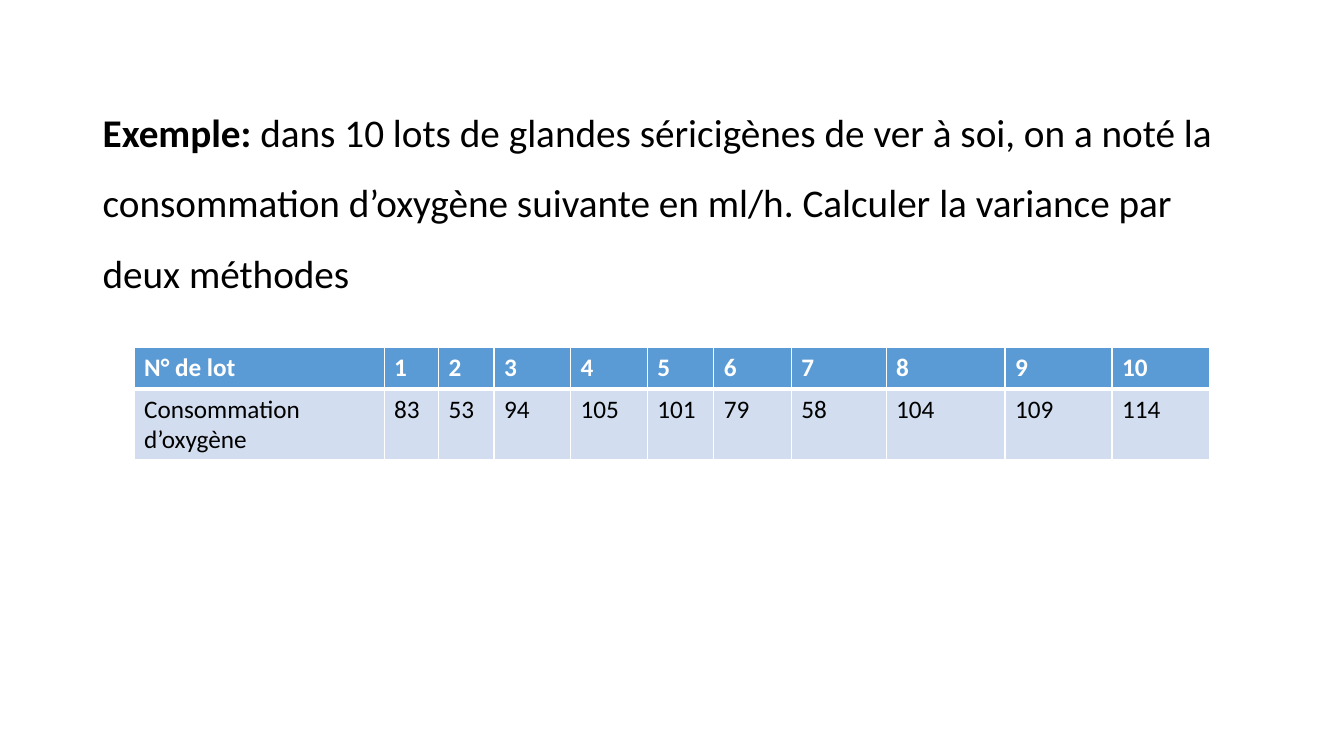
from dataclasses import dataclass

from lxml import etree
from pptx import Presentation
from pptx.dml.color import RGBColor
from pptx.enum.text import MSO_ANCHOR
from pptx.oxml.ns import qn
from pptx.util import Inches, Pt

TOP = MSO_ANCHOR.TOP


@dataclass(frozen=True)
class Theme:
    font: str = "Calibri"
    ink: str = "000000"
    white: str = "FFFFFF"
    head: str = "5B9BD5"
    band: str = "D2DEEF"
    body: int = 28
    cell: int = 18
    thin: int = 1
    thick: int = 3


THEME = Theme()

TASK = [
    ("Exemple:", True),
    (" dans 10 lots de glandes séricigènes de ver à soi, on a noté la "
     "consommation d’oxygène suivante en ml/h. Calculer la variance par "
     "deux méthodes", False),
]
OXYGEN = [83, 53, 94, 105, 101, 79, 58, 104, 109, 114]
ROWS = [
    ["N° de lot", *range(1, len(OXYGEN) + 1)],
    ["Consommation d’oxygène", *OXYGEN],
]
WIDTHS = [2.48, 0.54, 0.55, 0.76, 0.76, 0.66, 0.77, 0.94, 1.18, 1.06, 0.97]
HEIGHTS = [0.41, 0.7]


def set_all(item, values):
    for name, value in values.items():
        setattr(item, name, value)


def add_run(para, text, size, color, bold):
    run = para.add_run()
    run.text = str(text)
    set_all(run.font, {"name": THEME.font, "size": Pt(size), "bold": bold})
    run.font.color.rgb = RGBColor.from_string(color)


def add_task(slide, left, top, width, height):
    box = slide.shapes.add_textbox(
        Inches(left), Inches(top), Inches(width), Inches(height))
    frame = box.text_frame
    set_all(frame, {"word_wrap": True, "vertical_anchor": TOP})
    para = frame.paragraphs[0]
    set_all(para, {"line_spacing": 1.5, "space_before": Pt(10)})
    for text, bold in TASK:
        add_run(para, text, THEME.body, THEME.ink, bold)


def set_edges(cell, edges):
    props = cell._tc.get_or_add_tcPr()
    for side, width in edges.items():
        line = etree.SubElement(props, qn(f"a:ln{side}"), w=str(Pt(width)))
        fill = etree.SubElement(line, qn("a:solidFill"))
        etree.SubElement(fill, qn("a:srgbClr"), val=THEME.white)


def add_lots(slide, left, top):
    table = slide.shapes.add_table(
        len(ROWS), len(WIDTHS), Inches(left), Inches(top),
        Inches(sum(WIDTHS)), Inches(sum(HEIGHTS))).table
    for col, width in zip(table.columns, WIDTHS):
        col.width = Inches(width)
    for row, height in zip(table.rows, HEIGHTS):
        row.height = Inches(height)

    # Header row, then measured values; the edge between them is thick
    looks = [
        (THEME.head, THEME.white, True, "B"),
        (THEME.band, THEME.ink, False, "T"),
    ]
    for row, texts, look in zip(table.rows, ROWS, looks):
        back, color, bold, heavy = look
        for cell, text in zip(row.cells, texts):
            set_edges(cell, {side: THEME.thick if side == heavy else THEME.thin
                             for side in "LRTB"})
            cell.fill.solid()
            cell.fill.fore_color.rgb = RGBColor.from_string(back)
            add_run(cell.text_frame.paragraphs[0], text,
                    THEME.cell, color, bold)


def main():
    deck = Presentation()
    set_all(deck, {"slide_width": Inches(13.33), "slide_height": Inches(7.5)})
    slide = deck.slides.add_slide(deck.slide_layouts[6])
    # Problem statement
    add_task(slide, 0.92, 0.79, 11.5, 5.97)
    # Data by lot
    add_lots(slide, 1.33, 3.45)
    deck.save("out.pptx")


if __name__ == "__main__":
    main()
